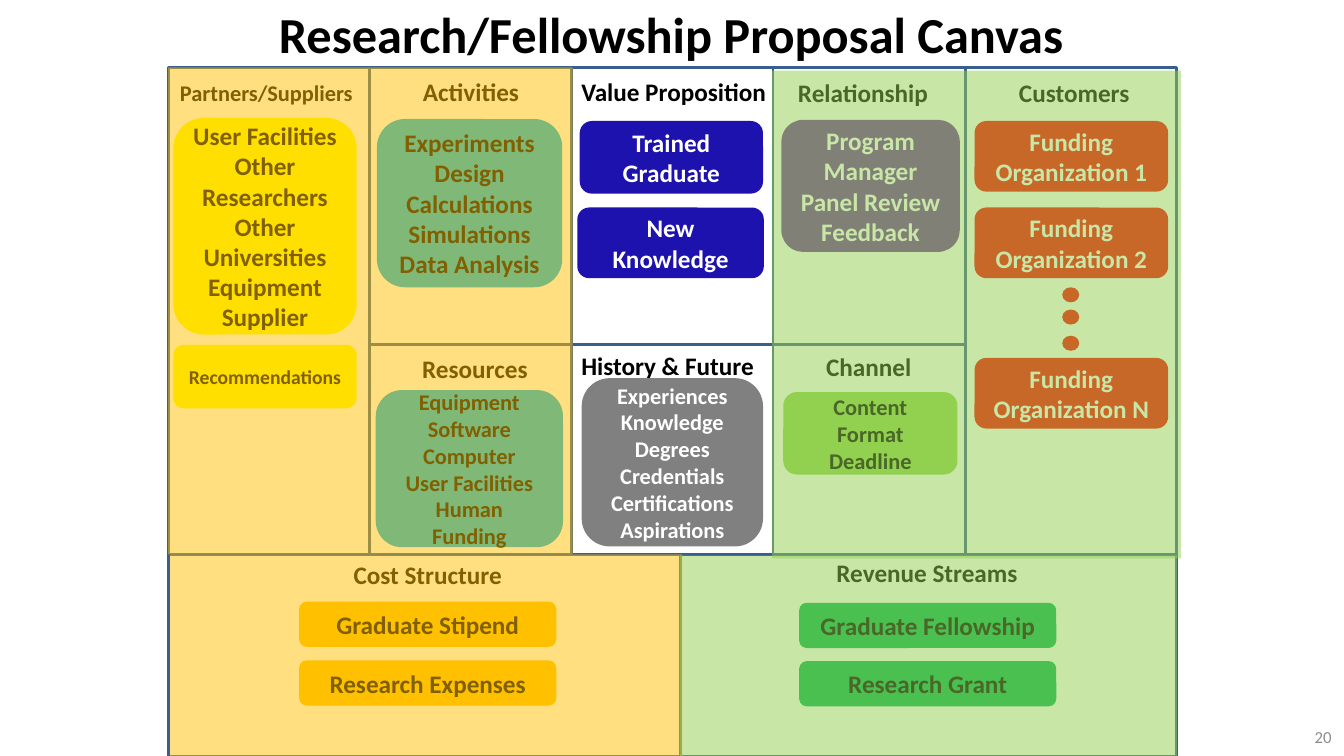
from dataclasses import dataclass

import pptx
import pptx.dml.color
import pptx.enum.shapes
import pptx.enum.text
import pptx.oxml.ns
import pptx.util
from lxml import etree

Cm = pptx.util.Cm
RGBColor = pptx.dml.color.RGBColor
Shape = pptx.enum.shapes.MSO_SHAPE
Align = pptx.enum.text.PP_ALIGN
Anchor = pptx.enum.text.MSO_ANCHOR
AutoSize = pptx.enum.text.MSO_AUTO_SIZE

BLACK = RGBColor(0x00, 0x00, 0x00)
WHITE = RGBColor(0xFF, 0xFF, 0xFF)
GRAY = RGBColor(0x80, 0x80, 0x80)
NUMBER_GRAY = RGBColor(0x8C, 0x8C, 0x8C)
FRAME_BLUE = RGBColor(0x3A, 0x5F, 0x8C)
NAVY = RGBColor(0x1D, 0x12, 0xAE)
RED = RGBColor(0xFF, 0x00, 0x00)
GREEN = RGBColor(0x00, 0xB0, 0x50)
LIME = RGBColor(0x92, 0xD0, 0x50)
AMBER = RGBColor(0xFF, 0xC0, 0x00)
PURPLE = RGBColor(0x70, 0x30, 0xA0)
SKY = RGBColor(0x00, 0xB0, 0xF0)
YELLOW = RGBColor(0xFF, 0xFF, 0x00)

FONT = "Calibri"
COLUMNS = [4.24, 9.32, 14.4, 19.48, 24.34, 29.66]
TOP, MIDDLE, LOWER, BOTTOM = 1.7, 8.68, 13.97, 19.05
SPLIT = 17.14


@dataclass
class Area:
    left: float
    top: float
    width: float
    height: float

    def lengths(self) -> list[pptx.util.Length]:
        return [Cm(value) for value in (self.left, self.top, self.width, self.height)]


@dataclass
class Card:
    text: str
    area: Area
    fill: RGBColor
    color: RGBColor = BLACK
    size: int = 18


@dataclass
class Label:
    text: str
    left: float
    top: float
    width: float
    height: float = 1.02
    size: int = 18
    wraps: bool = False
    align: Align = Align.LEFT


@dataclass
class Veil:
    area: Area
    fill: RGBColor


FRAMES = [
    Area(left, top, right - left, bottom - top)
    for left, top, right, bottom in [
        (COLUMNS[0], LOWER, SPLIT, BOTTOM),
        (COLUMNS[0], TOP, COLUMNS[1], LOWER),
        (SPLIT, LOWER, COLUMNS[5], BOTTOM),
        (COLUMNS[1], TOP, COLUMNS[2], MIDDLE),
        (COLUMNS[2], TOP, COLUMNS[3], MIDDLE),
        (COLUMNS[3], TOP, COLUMNS[4], MIDDLE),
        (COLUMNS[4], TOP, COLUMNS[5], LOWER),
        (COLUMNS[2], MIDDLE, COLUMNS[3], LOWER),
    ]
]
FUNDERS = [
    Card(f"Funding Organization {name}", Area(24.56, top, 4.88, 1.78), RED, WHITE)
    for name, top in [("1", 3.05), ("2", 5.23), ("N", 9.02)]
]
MONEY = [
    Card(text, Area(left, top, 6.48, 1.14), fill)
    for text, left, top, fill in [
        ("Graduate Fellowship", 20.14, 15.19, GREEN),
        ("Research Grant", 20.14, 16.66, GREEN),
        ("Graduate Stipend", 7.54, 15.16, AMBER),
        ("Research Expenses", 7.54, 16.64, AMBER),
    ]
]
CARDS = FUNDERS + MONEY + [
    Card("Trained Graduate", Area(14.61, 3.05, 4.62, 1.83), NAVY, WHITE),
    Card("New Knowledge", Area(14.55, 5.23, 4.7, 1.78), NAVY, WHITE),
    Card("Content\nFormat\nDeadline", Area(19.74, 9.88, 4.39, 2.08), LIME, size=16),
    Card("Program Manager\nPanel Review\nFeedback",
         Area(19.69, 3.02, 4.5, 3.33), PURPLE, WHITE),
    Card("Experiments\nDesign\nCalculations\nSimulations\nData Analysis",
         Area(9.5, 3, 4.67, 4.24), SKY),
    Card("Equipment\nSoftware\nComputer\nUser Facilities\nHuman\nFunding",
         Area(9.47, 9.83, 4.72, 3.96), SKY, size=16),
    Card("User Facilities\nOther Researchers\nOther Universities\nEquipment Supplier",
         Area(4.37, 2.97, 4.62, 5.46), YELLOW),
    Card("Recommendations", Area(4.37, 8.69, 4.62, 1.6), YELLOW, size=14),
]
HISTORY = Card(
    "Experiences\nKnowledge\nDegrees\nCredentials\nCertifications\nAspirations",
    Area(14.66, 9.53, 4.57, 4.24), GRAY, WHITE, 16)
LABELS = [
    Label("Partners/Suppliers", 4.24, 1.88, 4.95, 0.94, 16, True, Align.CENTER),
    Label("Activities", 10.41, 1.8, 2.95),
    Label("Resources", 10.39, 8.79, 3.18),
    Label("Value Proposition", 14.4, 1.8, 5.21),
    Label("History & Future", 14.4, 8.71, 4.9),
    Label("Relationship", 19.86, 1.83, 4.04, wraps=True),
    Label("Channel", 20.57, 8.74, 2.74, wraps=True),
    Label("Customers", 25.43, 1.83, 3.33),
    Label("Cost Structure", 8.66, 13.97, 4.27),
    Label("Revenue Streams", 20.83, 13.92, 5.11),
]
VEILS = [
    Veil(Area(4.29, 13.97, 12.9, 5.08), AMBER),
    Veil(Area(17.14, 14, 12.52, 5.05), LIME),
    Veil(Area(19.46, 1.78, 10.31, 12.29), LIME),
    Veil(Area(4.24, 1.7, 10.19, 12.27), AMBER),
]


def write_text(box, text: str, *, size: int, color: RGBColor = BLACK,
               bold: bool = True, align: Align = Align.CENTER,
               anchor: Anchor = Anchor.MIDDLE, wraps: bool = True) -> None:
    frame = box.text_frame
    frame.word_wrap = wraps
    frame.vertical_anchor = anchor
    frame.text = text
    for para in frame.paragraphs:
        para.alignment = align
        for span in para.runs:
            span.font.name = FONT
            span.font.size = pptx.util.Pt(size)
            span.font.bold = bold
            span.font.color.rgb = color


def draw_shape(page, kind: Shape, area: Area, fill: RGBColor | None = None):
    box = page.shapes.add_shape(kind, *area.lengths())
    box.shadow.inherit = False
    if fill is None:
        box.fill.background()
        box.line.color.rgb = FRAME_BLUE
        box.line.width = pptx.util.Pt(2)
    else:
        box.fill.solid()
        box.fill.fore_color.rgb = fill
        box.line.fill.background()
    return box


def draw_card(page, card: Card) -> None:
    box = draw_shape(page, Shape.ROUNDED_RECTANGLE, card.area, card.fill)
    write_text(box, card.text, size=card.size, color=card.color)


def draw_label(page, label: Label) -> None:
    area = Area(label.left, label.top, label.width, label.height)
    box = page.shapes.add_textbox(*area.lengths())
    write_text(box, label.text, size=label.size, align=label.align,
               anchor=Anchor.TOP, wraps=label.wraps)
    box.text_frame.auto_size = AutoSize.SHAPE_TO_FIT_TEXT


def draw_veil(page, veil: Veil) -> None:
    box = draw_shape(page, Shape.RECTANGLE, veil.area, veil.fill)
    color = box.fill._xPr.find(".//" + pptx.oxml.ns.qn("a:srgbClr"))
    etree.SubElement(color, pptx.oxml.ns.qn("a:alpha"), val="50000")


def main() -> None:
    deck = pptx.Presentation()
    deck.slide_width, deck.slide_height = Cm(33.87), Cm(19.05)
    page = deck.slides.add_slide(deck.slide_layouts[5])

    title = page.shapes.title
    title.left, title.top, title.width, title.height = Area(1.68, -0.03, 30.48, 1.73).lengths()
    write_text(title, "Research/Fellowship Proposal Canvas", size=36)
    number = page.shapes.add_textbox(*Area(25.91, 18.06, 7.9, 1.02).lengths())
    write_text(number, "20", size=12, color=NUMBER_GRAY, bold=False, align=Align.RIGHT)

    for frame in FRAMES:
        draw_shape(page, Shape.RECTANGLE, frame)
    for card in CARDS:
        draw_card(page, card)
    for top in (7.24, 7.8, 8.46):
        draw_shape(page, Shape.OVAL, Area(26.77, top, 0.43, 0.38), RED)
    for label in LABELS:
        draw_label(page, label)
    for veil in VEILS:
        draw_veil(page, veil)
    draw_card(page, HISTORY)

    deck.save("out.pptx")


if __name__ == "__main__":
    main()
